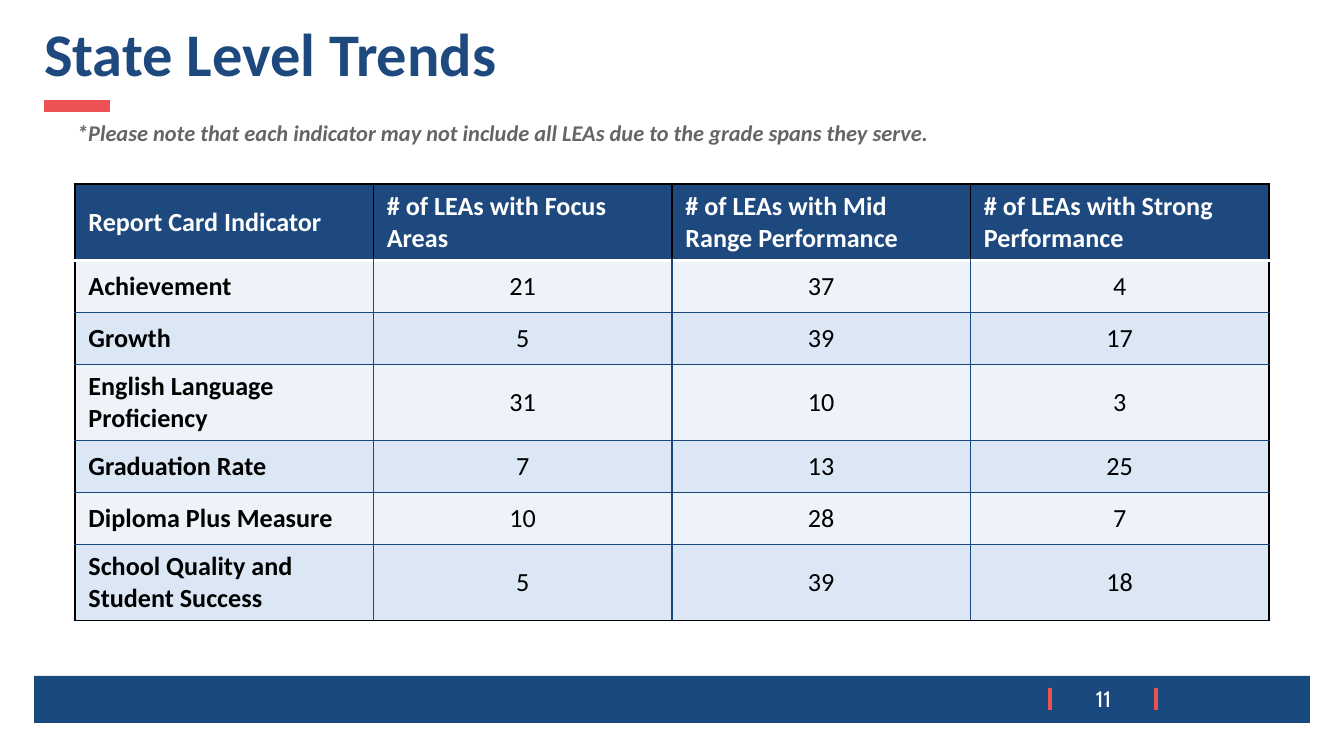
from lxml import etree
from pptx import Presentation
from pptx.dml.color import RGBColor
from pptx.enum.shapes import MSO_CONNECTOR, MSO_SHAPE
from pptx.enum.text import MSO_ANCHOR, PP_ALIGN
from pptx.oxml.ns import qn
from pptx.util import Pt

LEFT, CENTER = PP_ALIGN.LEFT, PP_ALIGN.CENTER
TOP, MIDDLE = MSO_ANCHOR.TOP, MSO_ANCHOR.MIDDLE
SCALE = 914400 / 134.4
NAVY, RED, WHITE, BLACK, GREY = "1E497F", "EC5153", "FFFFFF", "000000", "656565"
BAR, BANDS = "1A497F", ("EEF3FA", "DBE7F5")
OUTER, INNER, RULE = (BLACK, 1), ("1B477F", 0.75), (WHITE, 2)

TITLE = "State Level Trends"
NOTE = "*Please note that each indicator may not include all LEAs due to the grade spans they serve."
PAGE = "11"
HEADS = ["Report Card Indicator", "# of LEAs with Focus Areas",
         "# of LEAs with Mid Range Performance", "# of LEAs with Strong Performance"]
ROWS = [
    ("Achievement", 21, 37, 4),
    ("Growth", 5, 39, 17),
    ("English Language Proficiency", 31, 10, 3),
    ("Graduation Rate", 7, 13, 25),
    ("Diploma Plus Measure", 10, 28, 7),
    ("School Quality and Student Success", 5, 39, 18),
]
GRID = (75, 184, 1194)
TALL, SHORT, LONG = 73, 52, 25  # row heights; labels over LONG letters wrap

# text, box, alignment, anchor, line spacing, font
TEXTS = [
    (TITLE, (34, 19, 1276, 78), LEFT, TOP, 0.9,
     dict(name="Calibri", size=Pt(32.4), bold=True, color=NAVY)),
    (PAGE, (1071, 680, 65, 38), CENTER, MIDDLE, 1,
     dict(name="Cabin", size=Pt(12), color=WHITE)),
    (NOTE, (34, 108, 1276, 94), LEFT, TOP, 1.23,
     dict(name="Calibri", size=Pt(12), bold=True, italic=True, color=GREY)),
]
# start, end, width
LINES = [
    ((44, 106), (110, 106), 6),
    ((1156, 688), (1156, 710), 2.25),
    ((1050, 688), (1050, 710), 2.25),
]


def px(n):
    return round(n * SCALE)


def rgb(text):
    return RGBColor.from_string(text)


def write(frame, text, align, font):
    para = frame.paragraphs[0]
    para.alignment = align
    run = para.add_run()
    run.text = text
    for key, value in font.items():
        if key == "color":
            run.font.color.rgb = rgb(value)
        else:
            setattr(run.font, key, value)
    return para


def add_text(slide, text, box, align, anchor, space, font):
    frame = slide.shapes.add_textbox(*map(px, box)).text_frame
    form = dict(word_wrap=True, vertical_anchor=anchor, margin_left=px(10),
                margin_right=px(10), margin_top=px(5), margin_bottom=px(5))
    for key, value in form.items():
        setattr(frame, key, value)
    para = write(frame, text, align, font)
    para.line_spacing = space
    return para


def add_line(slide, start, end, width):
    line = slide.shapes.add_connector(
        MSO_CONNECTOR.STRAIGHT, *map(px, start + end))
    line.line.color.rgb = rgb(RED)
    line.line.width = Pt(width)
    etree.SubElement(line._element.spPr, qn("a:effectLst"))


def set_edges(cell, edges):
    """Edges run left, right, top, bottom and go ahead of the cell fill."""
    props = cell._tc.get_or_add_tcPr()
    for spot, (side, (color, width)) in enumerate(zip("LRTB", edges)):
        edge = etree.Element(qn("a:ln" + side), w=str(Pt(width)))
        fill = etree.SubElement(edge, qn("a:solidFill"))
        etree.SubElement(fill, qn("a:srgbClr"), val=color)
        props.insert(spot, edge)


def add_grid(slide):
    data = [HEADS] + ROWS
    left, top, width = GRID
    high = [TALL if r == 0 or len(row[0]) > LONG else SHORT
            for r, row in enumerate(data)]
    table = slide.shapes.add_table(
        len(data), len(HEADS), px(left), px(top), px(width), px(sum(high))).table
    for col in table.columns:
        col.width = px(width / len(HEADS))
    for r, row in enumerate(data):
        table.rows[r].height = px(high[r])
        head = r == 0
        for c, value in enumerate(row):
            cell = table.cell(r, c)
            cell.vertical_anchor = MIDDLE
            cell.fill.solid()
            cell.fill.fore_color.rgb = rgb(NAVY if head else BANDS[(r - 1) % 2])
            font = dict(name="Calibri", size=Pt(14), bold=head or c == 0,
                        color=WHITE if head else BLACK)
            write(cell.text_frame, str(value), LEFT if head or c == 0 else CENTER, font)
            set_edges(cell, (
                OUTER if head or c == 0 else INNER,
                OUTER if head or c == len(row) - 1 else INNER,
                OUTER if head else RULE if r == 1 else INNER,
                RULE if head else OUTER if r == len(data) - 1 else INNER))


def main():
    deck = Presentation()
    deck.slide_width, deck.slide_height = px(1344), px(756)
    slide = deck.slides.add_slide(deck.slide_layouts[6])
    bar = slide.shapes.add_shape(MSO_SHAPE.RECTANGLE, *map(px, (34, 676, 1276, 47)))
    bar.shadow.inherit = False
    bar.fill.solid()
    bar.fill.fore_color.rgb = rgb(BAR)
    bar.line.fill.background()
    for line in LINES:
        add_line(slide, *line)
    for item in TEXTS:
        para = add_text(slide, *item)
    indent = para._p.get_or_add_pPr()  # the note hangs by half its margin
    indent.set("marL", str(px(67)))
    indent.set("indent", str(-px(34)))
    add_grid(slide)
    deck.save("out.pptx")


if __name__ == "__main__":
    main()
